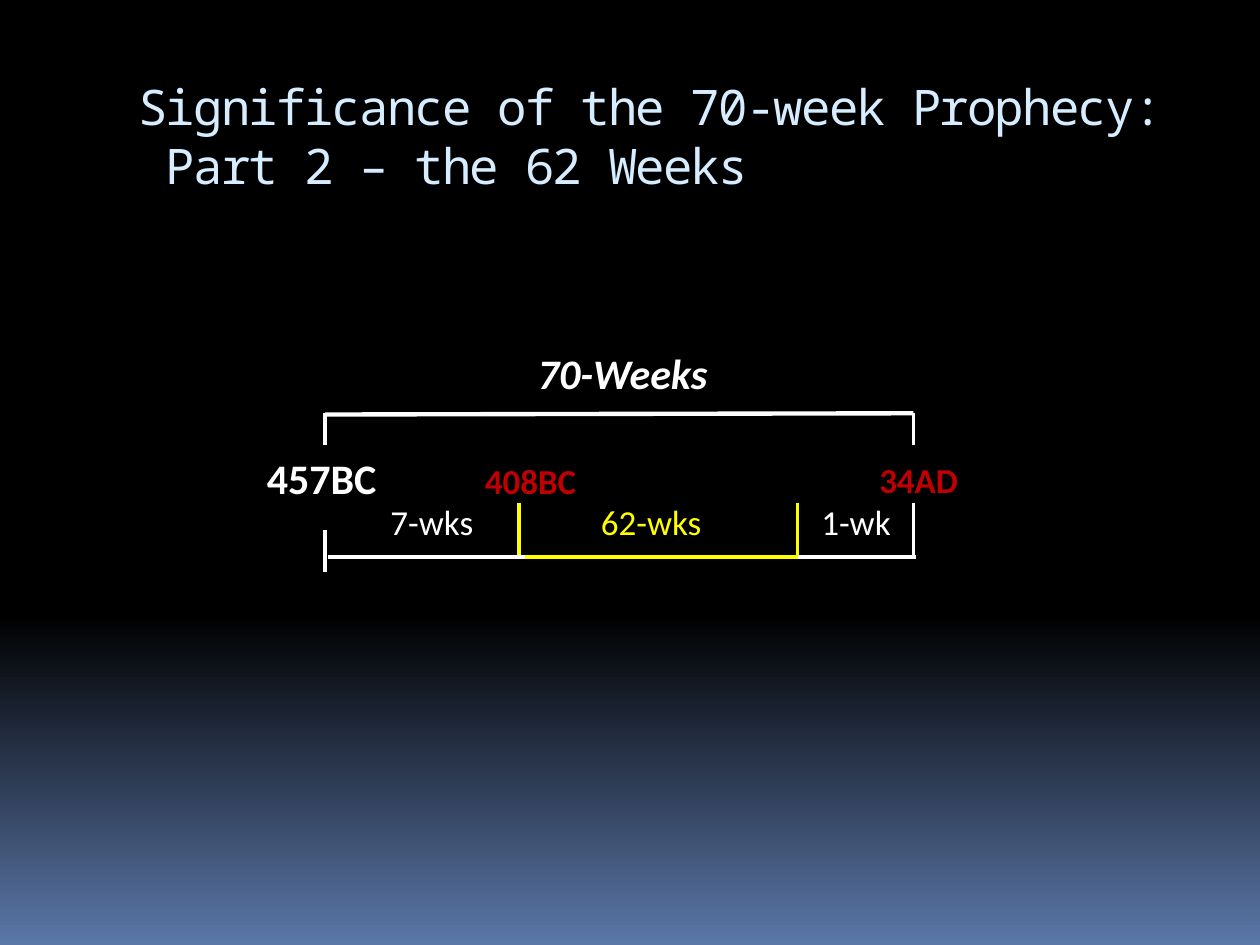
from copy import deepcopy
from dataclasses import dataclass

from pptx import Presentation
from pptx.dml.color import RGBColor
from pptx.enum.shapes import MSO_CONNECTOR
from pptx.oxml.ns import qn
from pptx.oxml.xmlchemy import OxmlElement
from pptx.util import Inches, Pt

STRAIGHT = MSO_CONNECTOR.STRAIGHT


@dataclass(frozen=True)
class Theme:
    black: str = "000000"
    horizon: str = "5B77A8"
    heading: str = "D6ECFF"
    white: str = "FFFFFF"
    yellow: str = "FFFF00"
    red: str = "C00000"
    heading_font: str = "Noto Sans Mono"
    body_font: str = "Calibri"
    heading_size: int = 28
    large_size: int = 24
    label_size: int = 20
    tick_width: float = 2
    bar_width: float = 2.5


THEME = Theme()


def paint_background(slide):
    fill = slide.background.fill
    fill.gradient()
    fill.gradient_angle = 270
    stop_list = slide.element.find(".//" + qn("a:gsLst"))
    stop_list.insert(1, deepcopy(stop_list[0]))
    stops = ((0, THEME.black), (0.65, THEME.black), (1, THEME.horizon))
    for stop, (position, color) in zip(fill.gradient_stops, stops):
        stop.position = position
        stop.color.rgb = RGBColor.from_string(color)


def add_text(slide, box, text, size, color, font=THEME.body_font,
             bold=False, italic=False):
    frame = slide.shapes.add_textbox(*map(Inches, box)).text_frame
    frame.word_wrap = True
    paragraph = frame.paragraphs[0]
    paragraph.text = text
    for run in paragraph.runs:
        run.font.name = font
        run.font.size = Pt(size)
        run.font.color.rgb = RGBColor.from_string(color)
        run.font.bold = bold
        run.font.italic = italic
    return paragraph


def add_line(slide, start, end, color, width):
    line = slide.shapes.add_connector(STRAIGHT, *map(Inches, (*start, *end)))
    line.line.color.rgb = RGBColor.from_string(color)
    line.line.width = Pt(width)
    line._element.spPr.append(OxmlElement("a:effectLst"))


def add_heading(slide, box):
    heading = add_text(
        slide, box,
        "Significance of the 70-week Prophecy:\v Part 2 – the 62 Weeks",
        THEME.heading_size, THEME.heading, THEME.heading_font)
    for run in heading.runs:
        run.font._element.set("spc", "-100")


def add_bracket(slide, box):
    left, top, width, height = box
    right = left + width
    add_line(slide, (left, top + 0.01), (right, top), THEME.white, THEME.bar_width)
    for x in (left, right):
        add_line(slide, (x, top), (x, top + height), THEME.white, THEME.tick_width)
    add_text(slide, (left + 1.59, top - 0.57, 1.75, 0.5), "70-Weeks",
             THEME.large_size, THEME.white, bold=True, italic=True)


def add_timeline(slide, box):
    left, top, width, height = box
    right, base = left + width, top + height

    ticks = ((left, 0.22, 0.55, THEME.white), (left + 1.54, 0, 0.42, THEME.yellow),
             (left + 3.75, 0, 0.42, THEME.yellow), (right, 0, 0.42, THEME.white))
    for x, upper, lower, color in ticks:
        add_line(slide, (x, top + upper), (x, top + lower), color, THEME.tick_width)

    bars = ((left + 0.02, right + 0.02, THEME.white),
            (left + 1.59, left + 3.75, THEME.yellow))
    for start, end, color in bars:
        add_line(slide, (start, base), (end, base), color, THEME.bar_width)

    periods = (("7-wks", 0.42, 0.92, THEME.white),
               ("62-wks", 2.09, 1.08, THEME.yellow),
               ("1-wk", 3.84, 0.83, THEME.white))
    for period, offset, span, color in periods:
        add_text(slide, (left + offset, top - 0.07, span, 0.44), period,
                 THEME.label_size, color)

    dates = (("457BC", -0.56, -0.45, 1.15, 0.5, THEME.large_size, THEME.white),
             ("408BC", 1.17, -0.39, 1.14, 0.44, THEME.label_size, THEME.red),
             ("34AD", 4.3, -0.4, 0.95, 0.44, THEME.label_size, THEME.red))
    for date, offset, rise, span, depth, size, color in dates:
        add_text(slide, (left + offset, top + rise, span, depth), date,
                 size, color, bold=True)


def main():
    presentation = Presentation()
    presentation.slide_width = Inches(10)
    presentation.slide_height = Inches(7.5)
    slide = presentation.slides.add_slide(presentation.slide_layouts[6])
    paint_background(slide)
    add_heading(slide, (1, 0.56, 8.5, 1))
    add_bracket(slide, (2.58, 3.28, 4.67, 0.25))
    add_timeline(slide, (2.58, 3.99, 4.67, 0.43))
    presentation.save("out.pptx")


if __name__ == "__main__":
    main()
